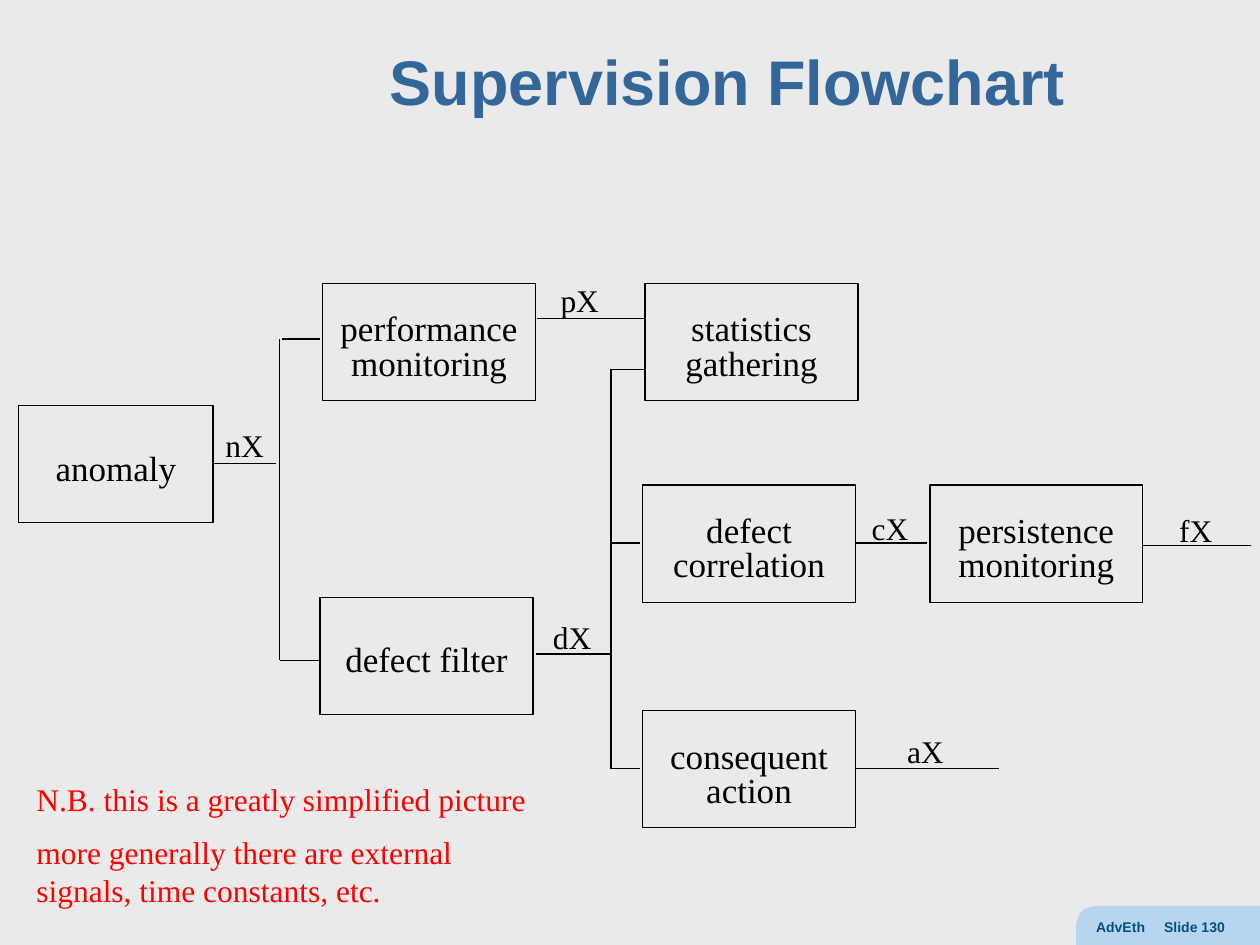
import pptx
import pptx.dml.color
import pptx.enum.shapes
import pptx.enum.text
import pptx.oxml.xmlchemy
import pptx.util
from pptx.util import Inches

COLORS = {
    "background": "EAEAEA",
    "tab": "B7D5EF",
    "footer": "005081",
    "title": "336699",
    "ink": "000000",
    "note": "FF0000",
}
ALIGN = pptx.enum.text.PP_ALIGN
ANCHOR = pptx.enum.text.MSO_ANCHOR


def rgb(name):
    return pptx.dml.color.RGBColor.from_string(COLORS[name])


def write_text(shape, text, size=18, font="Times New Roman", color="ink",
               bold=False, align=ALIGN.LEFT, anchor=ANCHOR.TOP, spacings=(1,),
               space_before=0, top_inset=0.05, tab_stop=None):
    """Write one paragraph per line; spacings are reused from the last one on."""
    frame = shape.text_frame
    frame.word_wrap = True
    frame.vertical_anchor = anchor
    frame.margin_top = Inches(top_inset)
    for index, line in enumerate(text.split("\n")):
        paragraph = frame.add_paragraph() if index else frame.paragraphs[0]
        if tab_stop:
            tab_list = pptx.oxml.xmlchemy.OxmlElement("a:tabLst")
            tab = pptx.oxml.xmlchemy.OxmlElement("a:tab")
            tab.set("pos", str(Inches(tab_stop)))
            tab.set("algn", "l")
            tab_list.append(tab)
            paragraph._p.get_or_add_pPr().append(tab_list)
        paragraph.alignment = align
        paragraph.line_spacing = spacings[min(index, len(spacings) - 1)]
        if index:
            paragraph.space_before = pptx.util.Pt(space_before)
        run = paragraph.add_run()
        run.text = line
        run.font.name = font
        run.font.size = pptx.util.Pt(size)
        run.font.bold = bold
        run.font.color.rgb = rgb(color)


presentation = pptx.Presentation()
presentation.slide_width = Inches(10)
presentation.slide_height = Inches(7.5)
slide = presentation.slides.add_slide(presentation.slide_layouts[6])
slide.background.fill.solid()
slide.background.fill.fore_color.rgb = rgb("background")
shapes = slide.shapes

# Footer tab with a rounded corner
outline = [(10, 7.19), (10, 7.5), (8.54, 7.5), (8.54, 7.34), (8.55, 7.3),
           (8.57, 7.25), (8.6, 7.22), (8.65, 7.2), (8.69, 7.19)]
points = [(Inches(x), Inches(y)) for x, y in outline]
builder = shapes.build_freeform(*points[0])
builder.add_line_segments(points[1:], close=True)
footer_tab = builder.convert_to_shape()
footer_tab.shadow.inherit = False
footer_tab.fill.solid()
footer_tab.fill.fore_color.rgb = rgb("tab")
footer_tab.line.fill.background()

footer = shapes.add_textbox(Inches(8.6), Inches(7.24), Inches(1.39), Inches(0.25))
write_text(footer, "AdvEth\tSlide 130", size=8, font="Arial", color="footer",
           bold=True, tab_stop=0.54)

# Title
title = shapes.add_textbox(Inches(2.12), Inches(0.18), Inches(7.31), Inches(0.99))
write_text(title, "Supervision Flowchart", size=36, font="Arial", color="title",
           bold=True, align=ALIGN.CENTER, anchor=ANCHOR.MIDDLE, spacings=(0.9,))

# Process boxes: text, left, top, width
boxes = [
    ("anomaly", 0.15, 3.22, 1.54),
    ("performance\nmonitoring", 2.56, 2.25, 1.69),
    ("statistics\ngathering", 5.12, 2.25, 1.69),
    ("defect filter", 2.54, 4.74, 1.69),
    ("defect\ncorrelation", 5.1, 3.85, 1.69),
    ("persistence\nmonitoring", 7.38, 3.85, 1.69),
    ("consequent\naction", 5.1, 5.64, 1.69),
]
for text, left, top, width in boxes:
    box = shapes.add_shape(pptx.enum.shapes.MSO_SHAPE.RECTANGLE,
                           Inches(left), Inches(top), Inches(width), Inches(0.93))
    box.shadow.inherit = False
    box.fill.background()
    box.line.color.rgb = rgb("ink")
    box.line.width = pptx.util.Pt(0.75)
    spacings = (1.35, 0.5) if "\n" in text else (1.75,)
    write_text(box, text, size=20, align=ALIGN.CENTER, spacings=spacings,
               space_before=6, top_inset=0.07)

# Signal lines: start x, start y, end x, end y
lines = [
    # anomaly branch
    (1.69, 3.68, 2.19, 3.68),
    (2.22, 5.24, 2.22, 2.69),
    (2.24, 2.69, 2.54, 2.69),
    (2.22, 5.24, 2.53, 5.24),
    # performance monitoring to statistics
    (4.26, 2.53, 5.12, 2.53),
    # defect filter branch
    (4.25, 5.19, 4.85, 5.19),
    (4.85, 6.1, 4.85, 2.93),
    (4.86, 2.93, 5.12, 2.93),
    (4.85, 4.31, 5.08, 4.31),
    (4.85, 6.1, 5.08, 6.1),
    # outputs
    (6.79, 4.31, 7.36, 4.31),
    (9.07, 4.33, 9.93, 4.33),
    (6.79, 6.1, 7.93, 6.1),
]
for ends in lines:
    connector = shapes.add_connector(pptx.enum.shapes.MSO_CONNECTOR.STRAIGHT,
                                     *(Inches(value) for value in ends))
    connector.line.color.rgb = rgb("ink")
    connector.line.width = pptx.util.Pt(0.75)
    connector._element.spPr.append(pptx.oxml.xmlchemy.OxmlElement("a:effectLst"))

# Signal names: text, left, top
labels = [("nX", 1.69, 3.33), ("pX", 4.35, 2.18), ("dX", 4.29, 4.86),
          ("cX", 6.82, 3.99), ("fX", 9.26, 4.01), ("aX", 7.1, 5.76)]
for text, left, top in labels:
    label = shapes.add_textbox(Inches(left), Inches(top), Inches(0.61), Inches(0.4))
    write_text(label, text)

# Note
note = shapes.add_textbox(Inches(0.19), Inches(6.14), Inches(4.15), Inches(1.15))
write_text(note, "N.B. this is a greatly simplified picture\n"
           "more generally there are external signals, time constants, etc.",
           color="note", space_before=9)

presentation.save("out.pptx")
